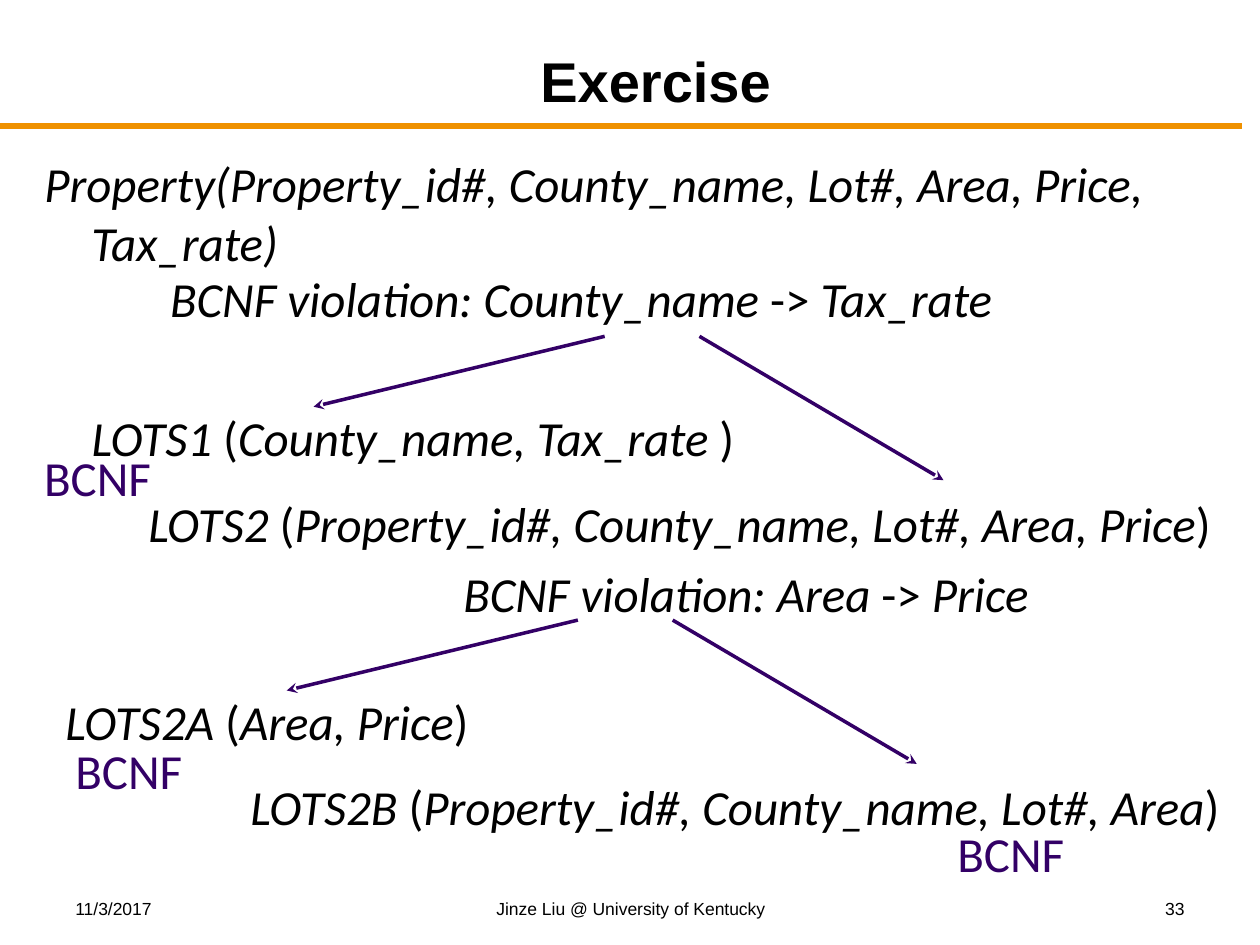
from dataclasses import dataclass

from lxml.etree import SubElement
from pptx import Presentation
from pptx.dml.color import RGBColor
from pptx.enum.shapes import MSO_CONNECTOR
from pptx.enum.text import MSO_ANCHOR, MSO_AUTO_SIZE, PP_ALIGN
from pptx.oxml.ns import qn
from pptx.util import Cm, Pt

COLORS = {"text": "000000", "accent": "330066", "rule": "EF9100"}
ITALIC = {"name": "Calibri", "size": Pt(28), "italic": True}
UPRIGHT = {**ITALIC, "italic": False}
FOOTER = {"name": "Arial", "size": Pt(10)}
TITLE = {"name": "Arial", "size": Pt(32), "bold": True}


@dataclass
class Label:
    left: float
    top: float
    width: float
    height: float
    texts: tuple
    formats: tuple = (ITALIC, UPRIGHT)
    color: str = "text"
    align: PP_ALIGN = PP_ALIGN.LEFT
    line_spacing: float = 1.0


@dataclass
class Line:
    start: tuple
    end: tuple
    color: str = "accent"
    width: float = 2
    arrow: bool = True


def relation(left: float, top: float, width: float, name: str, attributes: str) -> Label:
    return Label(left, top, width, 1.32, (name, " (", attributes, ")"), line_spacing=0.9)


def violation(left: float, top: float, width: float, source: str, target: str) -> Label:
    return Label(left, top, width, 1.45, (f"BCNF violation: {source} ", "-> ", target))


def normal_form(left: float, top: float) -> Label:
    return Label(left, top, 3.1, 1.45, ("BCNF",), (UPRIGHT,), "accent")


def footer(left: float, width: float, text: str, align: PP_ALIGN) -> Label:
    return Label(left, 17.98, width, 0.64, (text,), (FOOTER,), align=align)


def split_arrows(dx: float = 0, dy: float = 0) -> list:
    """Two arrows leading from a violation to the two relations it produces."""
    ends = [((12.19, 6.78), (6.32, 8.2)), ((14.1, 6.78), (19.02, 9.68))]
    return [Line((x1 + dx, y1 + dy), (x2 + dx, y2 + dy)) for (x1, y1), (x2, y2) in ends]


HEADING = Label(2.74, 0.64, 20.96, 1.78, ("Exercise",), (TITLE,), align=PP_ALIGN.CENTER)
SCHEMA = Label(0.64, 2.97, 23.93, 14.6,
               ("Property(Property_id#, County_name, Lot#, Area, Price, Tax_rate)",))
LABELS = [
    footer(1.27, 5.92, "11/3/2017", PP_ALIGN.LEFT),
    footer(8.69, 8.05, "Jinze Liu @ University of Kentucky", PP_ALIGN.CENTER),
    footer(18.21, 5.92, "33", PP_ALIGN.RIGHT),
    violation(3.18, 5.28, 19.25, "County_name", "Tax_rate"),
    relation(1.6, 8.23, 14.02, "LOTS1", "County_name, Tax_rate "),
    relation(2.74, 9.96, 22.81, "LOTS2", "Property_id#, County_name, Lot#, Area, Price"),
    violation(9.09, 11.23, 13.13, "Area", "Price"),
    relation(1.07, 13.94, 9.37, "LOTS2A", "Area, Price"),
    relation(4.8, 15.67, 20.78, "LOTS2B", "Property_id#, County_name, Lot#, Area"),
    normal_form(0.64, 8.89),
    normal_form(1.27, 14.81),
    normal_form(19.05, 16.48),
]
LINES = [
    Line((0, 2.54), (25.04, 2.54), "rule", 3, arrow=False),
    *split_arrows(),
    *split_arrows(-0.54, 5.72),
]


def write_label(shape, label: Label) -> None:
    """Place a shape and fill it with texts that cycle through the label's formats."""
    for side in ("left", "top", "width", "height"):
        setattr(shape, side, Cm(getattr(label, side)))
    frame = shape.text_frame
    frame.word_wrap = True
    frame.auto_size = MSO_AUTO_SIZE.NONE
    paragraph = frame.paragraphs[0]
    paragraph.alignment = label.align
    paragraph.line_spacing = label.line_spacing
    paragraph.space_before = Pt(0)
    for index, text in enumerate(label.texts):
        run = paragraph.add_run()
        run.text = text
        for name, value in label.formats[index % len(label.formats)].items():
            setattr(run.font, name, value)
        run.font.color.rgb = RGBColor.from_string(COLORS[label.color])


def draw_line(slide, line: Line) -> None:
    points = [Cm(value) for value in (*line.start, *line.end)]
    connector = slide.shapes.add_connector(MSO_CONNECTOR.STRAIGHT, *points)
    connector.line.color.rgb = RGBColor.from_string(COLORS[line.color])
    connector.line.width = Pt(line.width)
    if line.arrow:
        SubElement(connector.line._get_or_add_ln(), qn("a:tailEnd"), type="stealth")
    SubElement(connector._element.spPr, qn("a:effectLst"))


def main() -> None:
    presentation = Presentation()
    presentation.slide_width, presentation.slide_height = Cm(25.4), Cm(19.05)
    slide = presentation.slides.add_slide(presentation.slide_layouts[1])

    title, body = slide.placeholders
    write_label(title, HEADING)
    title.text_frame.vertical_anchor = MSO_ANCHOR.BOTTOM
    write_label(body, SCHEMA)
    properties = body.text_frame.paragraphs[0]._p.get_or_add_pPr()
    properties.set("marL", str(Cm(0.95)))
    properties.set("indent", str(-Cm(0.95)))
    SubElement(properties, qn("a:buNone"))

    for label in LABELS:
        write_label(slide.shapes.add_textbox(0, 0, 0, 0), label)
    for line in LINES:
        draw_line(slide, line)
    presentation.save("out.pptx")


if __name__ == "__main__":
    main()
